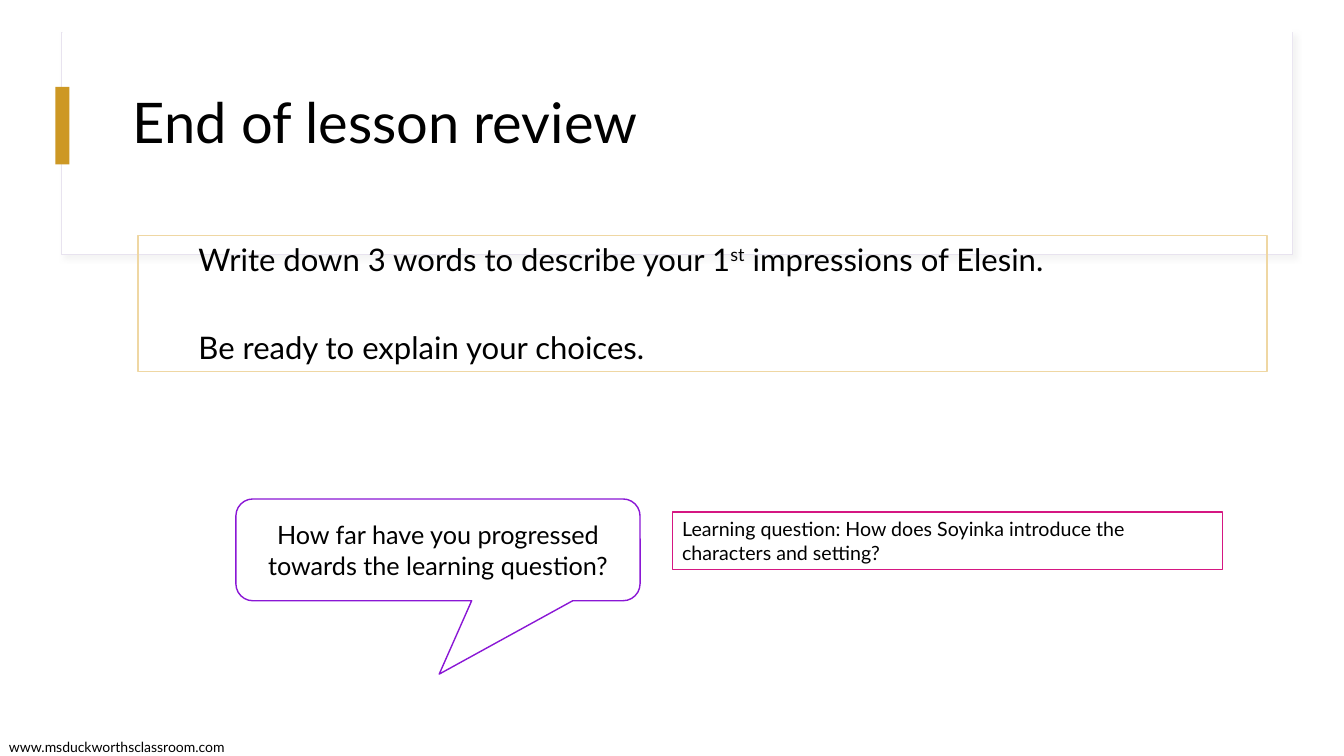
from lxml.etree import SubElement
from pptx import Presentation
from pptx.dml.color import RGBColor
from pptx.enum.shapes import MSO_SHAPE
from pptx.enum.text import MSO_ANCHOR, PP_ALIGN
from pptx.oxml.ns import qn
from pptx.util import Pt

COLORS = {
    "white": "FFFFFF", "black": "000000", "frame": "E8E3EF", "gold": "CD9824",
    "pale_gold": "EFD7A3", "pink": "D51782", "purple": "8A17D5", "shadow": "D9D9D9",
}
FONT = "Lato"

TITLE = ["End of lesson review"]
TASKS = [
    [("Write down 3 words to describe your 1", False), ("st", True),
     (" impressions of Elesin.", False)],
    "Be ready to explain your choices.",
]
QUESTION = ["Learning question: How does Soyinka introduce the characters and setting?"]
PROGRESS = ["How far have you progressed towards the learning question?"]
SITE = ["www.msduckworthsclassroom.com"]

# Left, top, width, height in points
FRAME_BOX = (43.9, 23, 879.1, 159.1)
COVER_BOX = (44.6, 0, 878.4, 158.4)
ACCENT_BOX = (39.6, 62, 10, 55.5)
SITE_BOX = (-0.7, 524.2, 177, 19.4)
TITLE_BOX = (87.8, 43.2, 800.6, 92.9)
TASKS_BOX = (98.6, 168, 806.4, 97.2)
QUESTION_BOX = (480.2, 365.8, 393.1, 41)
PROGRESS_BOX = (168.5, 356.4, 288.7, 72.7)
CALLOUT_ADJUSTMENTS = (0.003, 1.221, 0.167)


def rgb(name):
    return RGBColor.from_string(COLORS[name])


def add_box(slide, box, fill=None, line=None, weight=1, kind=MSO_SHAPE.RECTANGLE):
    sp = slide.shapes.add_shape(kind, *map(Pt, box))
    sp.shadow.inherit = False
    if fill:
        sp.fill.solid()
        sp.fill.fore_color.rgb = rgb(fill)
    else:
        sp.fill.background()
    if line:
        sp.line.color.rgb = rgb(line)
        sp.line.width = Pt(weight)
    else:
        sp.line.fill.background()
    return sp


def write(sp, paragraphs, size, anchor=MSO_ANCHOR.TOP, align=PP_ALIGN.LEFT, wrap=True):
    """Fill a shape with paragraphs, each a string or a list of (text, raised) runs."""
    tf = sp.text_frame
    tf.word_wrap = wrap
    tf.vertical_anchor = anchor
    for i, content in enumerate(paragraphs):
        p = tf.add_paragraph() if i else tf.paragraphs[0]
        p.alignment = align
        p.font.name = FONT
        p.font.size = Pt(size)
        p.font.color.rgb = rgb("black")
        runs = [(content, False)] if isinstance(content, str) else content
        for text, raised in runs:
            r = p.add_run()
            r.text = text
            if raised:
                r.font._element.set("baseline", "30000")
    return tf


def add_soft_shadow(sp):
    effects = sp._element.spPr.find(qn("a:effectLst"))
    shadow = SubElement(effects, qn("a:outerShdw"), blurRad=str(Pt(4)),
                        dist=str(Pt(3)), dir=str(45 * 60000))
    color = SubElement(shadow, qn("a:srgbClr"), val=COLORS["shadow"])
    SubElement(color, qn("a:alpha"), val="30000")


def main():
    prs = Presentation()
    prs.slide_width, prs.slide_height = Pt(960), Pt(540)
    slide = prs.slides.add_slide(prs.slide_layouts[6])

    add_soft_shadow(add_box(slide, FRAME_BOX, "white", "frame", 0.75))
    add_box(slide, COVER_BOX, "white")
    add_box(slide, ACCENT_BOX, "gold")

    site = slide.shapes.add_textbox(*map(Pt, SITE_BOX))
    write(site, SITE, 10, wrap=False)

    title = write(add_box(slide, TITLE_BOX), TITLE, 40, MSO_ANCHOR.MIDDLE)
    title.paragraphs[0].line_spacing = 0.9

    tasks = write(add_box(slide, TASKS_BOX, line="pale_gold"), TASKS, 22.2)
    tasks.margin_left = Pt(43.2)
    tasks.paragraphs[1].space_before = Pt(36.5)

    write(add_box(slide, QUESTION_BOX, "white", "pink"), QUESTION, 14)

    callout = add_box(slide, PROGRESS_BOX, "white", "purple",
                      kind=MSO_SHAPE.ROUNDED_RECTANGULAR_CALLOUT)
    for i, value in enumerate(CALLOUT_ADJUSTMENTS):
        callout.adjustments[i] = value
    write(callout, PROGRESS, 18, MSO_ANCHOR.MIDDLE, PP_ALIGN.CENTER)

    prs.save("out.pptx")


if __name__ == "__main__":
    main()
